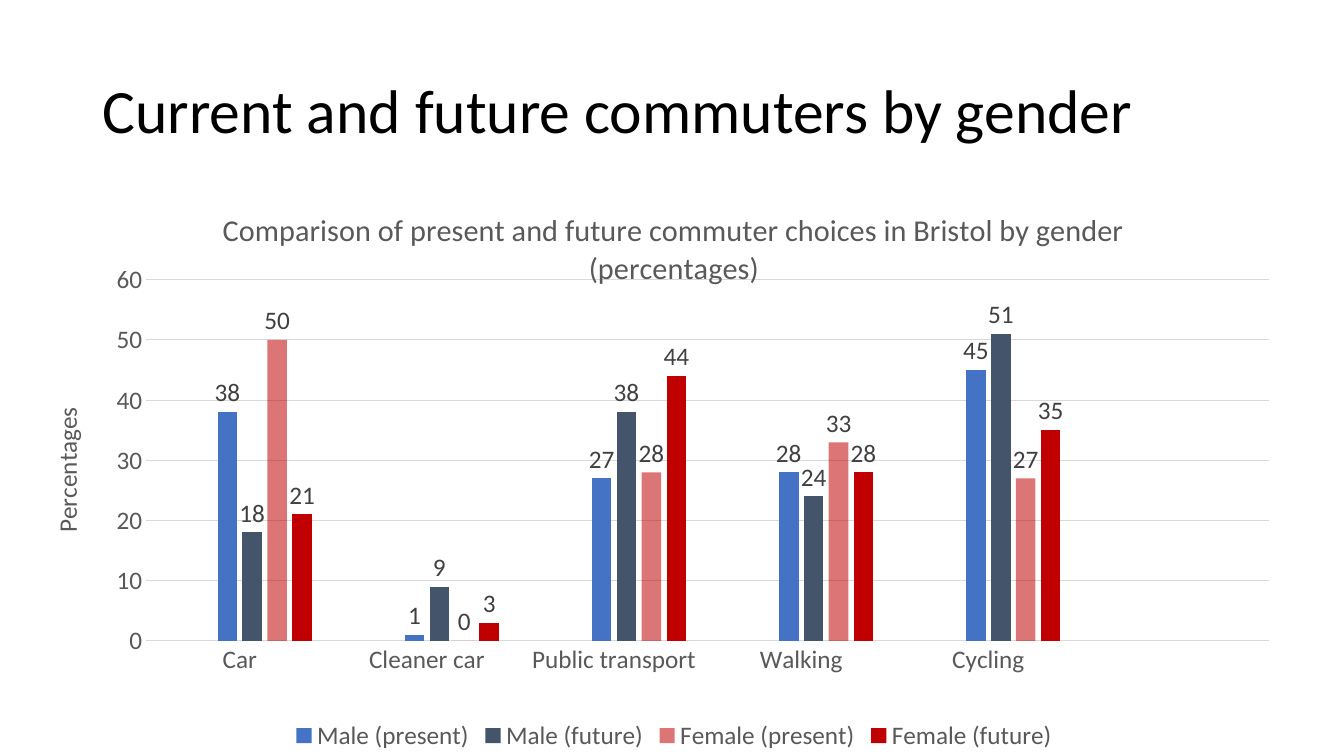
from lxml import etree
from pptx import Presentation
from pptx.chart.data import CategoryChartData
from pptx.dml.color import RGBColor
from pptx.enum import chart as ch, text
from pptx.oxml import parse_xml
from pptx.oxml.ns import nsdecls, qn
from pptx.util import Inches, Pt

HUES = {"ink": "000000", "gray": "595959", "label": "404040", "grid": "D9D9D9",
        "blue": "4472C4", "navy": "44546A", "red": "C00000"}


def style(font, size, hue):
    font.size, font.name, font.bold = Pt(size), "Calibri", False
    font.color.rgb = RGBColor.from_string(HUES[hue])


def place(part, x, y, w=None, h=None):
    """Give a chart part a manual layout in fractions of the chart."""
    size = "" if w is None else f'<c:w val="{w}"/><c:h val="{h}"/>'
    inner = "" if w is None else '<c:layoutTarget val="inner"/>'
    return parse_xml(
        f'<c:layout {nsdecls("c")}><c:manualLayout>{inner}<c:xMode val="edge"/>'
        f'<c:yMode val="edge"/><c:x val="{x}"/><c:y val="{y}"/>{size}'
        '</c:manualLayout></c:layout>') if part is None else part


prs = Presentation()
prs.slide_width, prs.slide_height = Inches(13.33), Inches(7.5)
slide = prs.slides.add_slide(prs.slide_layouts[6])

# Heading
head = slide.shapes.add_textbox(Inches(0.92), Inches(0.4), Inches(11.5), Inches(1.45))
frame = head.text_frame
frame.word_wrap = True
frame.vertical_anchor = text.MSO_ANCHOR.MIDDLE
frame.text = "Current and future commuters by gender"
frame.paragraphs[0].line_spacing = 0.9
style(frame.paragraphs[0].runs[0].font, 44, "ink")

# Chart data: two empty series and one empty category keep the spacing
rows = [
    ("Series 1", [None] * 5, "blue"),
    ("Series 2", [None] * 5, "blue"),
    ("Male (present)", [38, 1, 27, 28, 45], "blue"),
    ("Male (future)", [18, 9, 38, 24, 51], "navy"),
    ("Female (present)", [50, 0, 28, 33, 27], "red"),
    ("Female (future)", [21, 3, 44, 28, 35], "red"),
]
data = CategoryChartData()
data.categories = ["Car", "Cleaner car", "Public transport", "Walking", "Cycling", ""]
for name, vals, _ in rows:
    data.add_series(name, vals + [None])
chart = slide.shapes.add_chart(
    ch.XL_CHART_TYPE.COLUMN_CLUSTERED, Inches(0.27), Inches(1.85),
    Inches(12.83), Inches(5.65), data).chart
style(chart.font, 18, "gray")

# Chart title
chart.has_title = True
title = chart.chart_title.text_frame
title.text = "Comparison of present and future commuter choices in Bristol by gender (percentages)"
style(title.paragraphs[0].runs[0].font, 21.6, "gray")

# Columns and value labels
plot = chart.plots[0]
plot.vary_by_categories = False
plot.gap_width, plot.overlap = 219, -27
for bars, (name, _, hue) in zip(plot.series, rows):
    bars.format.fill.solid()
    bars.format.fill.fore_color.rgb = RGBColor.from_string(HUES[hue])
    if name == "Female (present)":
        color = bars.format.fill._xPr.find(".//" + qn("a:srgbClr"))
        etree.SubElement(color, qn("a:alpha")).set("val", "54000")
    tags = bars.data_labels
    tags.show_value = True
    tags.position = ch.XL_LABEL_POSITION.OUTSIDE_END
    style(tags.font, 18, "label")

# Axes
cat, val = chart.category_axis, chart.value_axis
for axis in (cat, val):
    axis.major_tick_mark = axis.minor_tick_mark = ch.XL_TICK_MARK.NONE
    style(axis.tick_labels.font, 18, "gray")
val.minimum_scale, val.maximum_scale, val.major_unit = 0, 60, 10
val.format.line.fill.background()
for line in (cat.format.line, val.major_gridlines.format.line):
    line.width = Pt(0.75)
    line.color.rgb = RGBColor.from_string(HUES["grid"])
val.has_title = True
side = val.axis_title.text_frame
side.text = "Percentages"
style(side.paragraphs[0].runs[0].font, 18, "gray")

# Legend without the two empty series
chart.has_legend = True
key = chart.legend
key.position = ch.XL_LEGEND_POSITION.BOTTOM
key.include_in_layout = False
style(key.font, 18, "gray")
spot = key._element.find(qn("c:legendPos"))
for i in (1, 0):
    spot.addnext(parse_xml(
        f'<c:legendEntry {nsdecls("c")}><c:idx val="{i}"/><c:delete val="1"/></c:legendEntry>'))

# Plot area position
area = chart._chartSpace.chart.plotArea
for old in area.findall(qn("c:layout")):
    area.remove(old)
area.insert(0, place(None, 0.092, 0.164, 0.868, 0.634))

prs.save("out.pptx")
